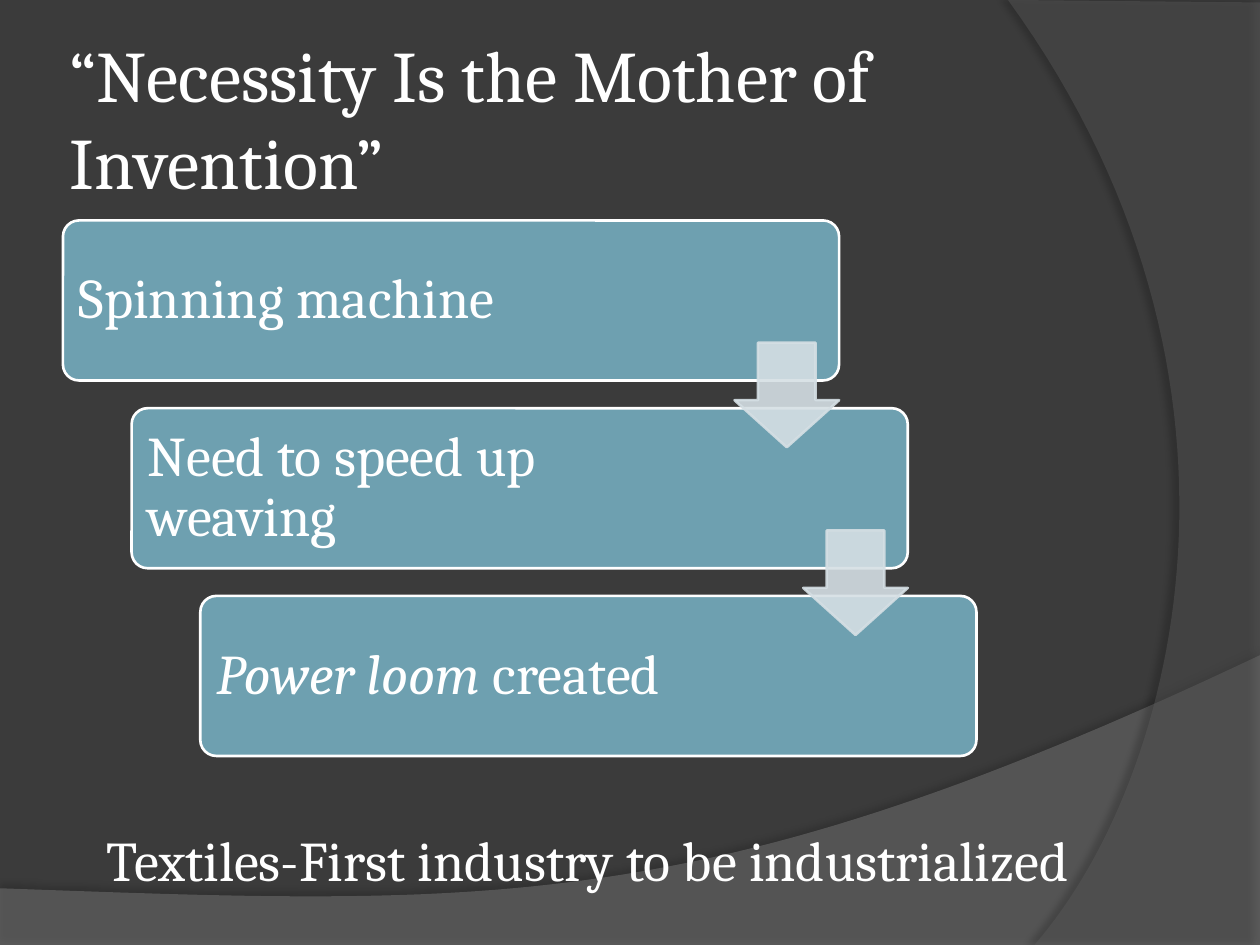
from pptx import Presentation
from pptx import util as u
from pptx.dml.color import RGBColor
from pptx.enum import shapes, text
from pptx.oxml import parse_xml
from pptx.oxml.ns import nsdecls, qn
from lxml import etree

COLORS = {
    "background": "3B3B3B",
    "wave": "7F7F7F",
    "arc": "5E5E5E",
    "box": "6EA0B0",
    "arrow": "D5DFE4",
    "white": "FFFFFF",
    "shadow": "000000",
}
FONT = "Cambria"
STEPS = [
    [("Spinning machine", False)],
    [("Need to speed up weaving", False)],
    [("Power loom ", True), ("created", False)],
]
BOX_LEFT, BOX_TOP, BOX_WIDTH, BOX_HEIGHT = 0.5, 1.75, 6.16, 1.27
STEP_X, STEP_Y = 0.545, 1.49
ARROW_SIZE = 0.83


def rgb(name):
    return RGBColor.from_string(COLORS[name])


def set_alpha(fill_parent, percent):
    color = fill_parent.find(".//" + qn("a:srgbClr"))
    etree.SubElement(color, qn("a:alpha")).set("val", str(percent * 1000))


def paint(shape, fill, line=None, alpha=100):
    shape.shadow.inherit = False
    shape.fill.solid()
    shape.fill.fore_color.rgb = rgb(fill)
    if line:
        shape.line.color.rgb = rgb(line)
        shape.line.width = u.Pt(1.5)
    else:
        shape.line.fill.background()
    if alpha < 100:
        properties = shape._element.spPr
        set_alpha(properties.find(qn("a:solidFill")), alpha)
        if line:
            set_alpha(properties.find(qn("a:ln")), alpha)


def format_runs(paragraph, size):
    for run in paragraph.runs:
        run.font.name = FONT
        run.font.size = u.Pt(size)
        run.font.color.rgb = rgb("white")


def bezier(start, control_1, control_2, end, steps=60):
    points = []
    for i in range(steps + 1):
        t = i / steps
        weights = ((1 - t) ** 3, 3 * t * (1 - t) ** 2, 3 * t * t * (1 - t), t ** 3)
        corners = (start, control_1, control_2, end)
        points.append(tuple(sum(w * c[axis] for w, c in zip(weights, corners))
                            for axis in (0, 1)))
    return points


def add_backdrop(slide, points, fill, alpha, shadow_alpha, distance, direction):
    outline = [(u.Inches(x), u.Inches(y)) for x, y in points]
    builder = slide.shapes.build_freeform(*outline[0])
    builder.add_line_segments(outline[1:], close=True)
    shape = builder.convert_to_shape()
    paint(shape, fill, alpha=alpha)
    effects = shape._element.spPr.find(qn("a:effectLst"))
    effects.append(parse_xml(
        f'<a:outerShdw {nsdecls("a")} blurRad="{u.Pt(4)}" dist="{u.Pt(distance)}" '
        f'dir="{direction * 60000}" algn="ctr" rotWithShape="0">'
        f'<a:srgbClr val="{COLORS["shadow"]}"><a:alpha val="{shadow_alpha * 1000}"/>'
        '</a:srgbClr></a:outerShdw>'))


def add_title(slide, title_text):
    title = slide.shapes.title
    title.left, title.top = u.Inches(0.5), u.Inches(0.3)
    title.width, title.height = u.Inches(8.17), u.Inches(1.25)
    frame = title.text_frame
    frame.text = title_text
    frame.word_wrap = True
    frame.auto_size = text.MSO_AUTO_SIZE.NONE
    frame.vertical_anchor = text.MSO_ANCHOR.MIDDLE
    frame.margin_left = frame.margin_right = u.Inches(0.05)
    frame.margin_top = frame.margin_bottom = u.Inches(0.05)
    frame.paragraphs[0].alignment = text.PP_ALIGN.LEFT
    format_runs(frame.paragraphs[0], 41.4)
    # Bring the title in front of the backdrop
    slide.shapes._spTree.append(title._element)


def add_step(slide, index, parts):
    box = slide.shapes.add_shape(
        shapes.MSO_SHAPE.ROUNDED_RECTANGLE,
        u.Inches(BOX_LEFT + index * STEP_X), u.Inches(BOX_TOP + index * STEP_Y),
        u.Inches(BOX_WIDTH), u.Inches(BOX_HEIGHT))
    box.adjustments[0] = 0.1
    paint(box, "box", "white")
    frame = box.text_frame
    frame.word_wrap = True
    frame.vertical_anchor = text.MSO_ANCHOR.MIDDLE
    frame.margin_left = frame.margin_top = frame.margin_bottom = u.Inches(0.09)
    frame.margin_right = u.Inches(1.46)  # keeps the text clear of the arrow
    paragraph = frame.paragraphs[0]
    paragraph.alignment = text.PP_ALIGN.LEFT
    paragraph.line_spacing = 0.9
    for words, italic in parts:
        run = paragraph.add_run()
        run.text = words
        run.font.italic = italic
    format_runs(paragraph, 32)


def add_step_arrow(slide, index):
    right = BOX_LEFT + BOX_WIDTH + index * STEP_X
    arrow = slide.shapes.add_shape(
        shapes.MSO_SHAPE.DOWN_ARROW,
        u.Inches(right - ARROW_SIZE), u.Inches(2.72 + index * STEP_Y),
        u.Inches(ARROW_SIZE), u.Inches(ARROW_SIZE))
    arrow.adjustments[0], arrow.adjustments[1] = 0.55, 0.45
    paint(arrow, "arrow", "arrow", alpha=90)


def add_caption(slide, caption_text):
    caption = slide.shapes.add_textbox(
        u.Inches(0.75), u.Inches(6.5), u.Inches(8.55), u.Inches(0.64))
    frame = caption.text_frame
    frame.text = caption_text
    frame.word_wrap = False
    frame.auto_size = text.MSO_AUTO_SIZE.SHAPE_TO_FIT_TEXT
    format_runs(frame.paragraphs[0], 32)


def main():
    presentation = Presentation()
    presentation.slide_width, presentation.slide_height = u.Inches(10), u.Inches(7.5)
    slide = presentation.slides.add_slide(presentation.slide_layouts[5])
    slide.background.fill.solid()
    slide.background.fill.fore_color.rgb = rgb("background")

    # Curved backdrop
    wave = bezier((10, 5.2), (5.59, 7.29), (3.91, 7.19), (0, 7.05))
    add_backdrop(slide, wave + [(0, 7.51), (10, 7.51)], "wave", 45, 35, 3.5, 270)
    arc = bezier((8.21, 7.5), (9.35, 6.19), (10.18, 3), (8, 0))
    add_backdrop(slide, arc + [(10, 0.02), (10, 7.5)], "arc", 40, 45, 4, 180)

    add_title(slide, "“Necessity Is the Mother of Invention”")

    # Staircase of steps, with the arrows on top
    for index, parts in enumerate(STEPS):
        add_step(slide, index, parts)
    for index in range(len(STEPS) - 1):
        add_step_arrow(slide, index)

    add_caption(slide, "Textiles-First industry to be industrialized")
    presentation.save("out.pptx")


if __name__ == "__main__":
    main()
